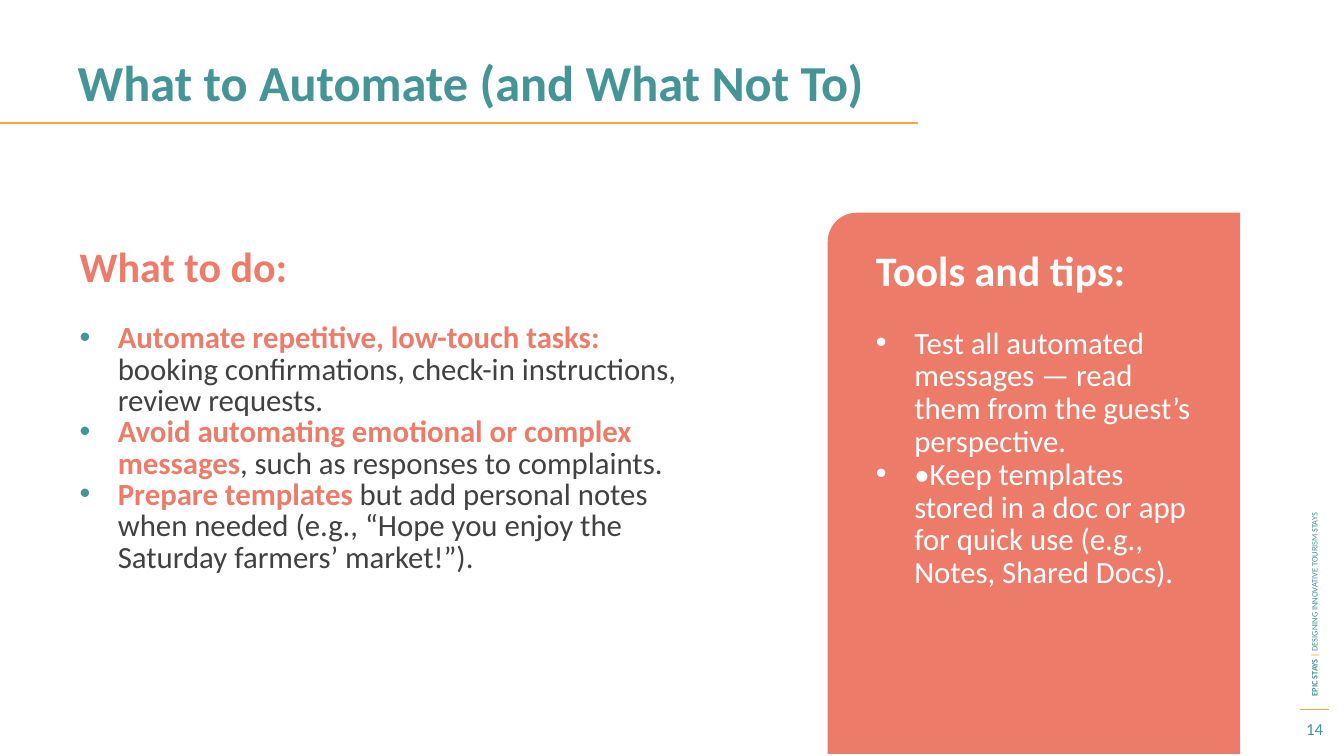
"""Build the slide on what to automate, with a card of tools and tips."""
from dataclasses import dataclass
from typing import Any, Optional

from lxml.etree import SubElement
from pptx import Presentation
from pptx.dml.color import RGBColor
from pptx.enum.shapes import MSO_CONNECTOR, MSO_SHAPE
from pptx.enum.text import MSO_ANCHOR, MSO_AUTO_SIZE, PP_ALIGN
from pptx.oxml.ns import qn
from pptx.util import Emu, Inches, Pt

COLORS = {
    "teal": "459597",
    "coral": "EC7C69",
    "amber": "FBA63B",
    "ink": "414141",
    "white": "FFFFFF",
}
SLIDE_W, SLIDE_H = Inches(13.33), Inches(7.5)
INDENT = Inches(0.38)


@dataclass(frozen=True)
class Box:
    """Place as percentages of the slide's width and height."""
    left: float
    top: float
    width: float
    height: float

    def frame(self, turned: bool = False) -> tuple[Emu, ...]:
        x, w = (Emu(int(SLIDE_W * v / 100)) for v in (self.left, self.width))
        y, h = (Emu(int(SLIDE_H * v / 100)) for v in (self.top, self.height))
        if turned:
            return Emu(x + (w - h) // 2), Emu(y + (h - w) // 2), h, w
        return x, y, w, h


@dataclass(frozen=True)
class Run:
    text: str
    color: str
    bold: bool = False


@dataclass(frozen=True)
class Para:
    runs: tuple[Run, ...]
    size: float
    spacing: Optional[float] = None
    bullet: Optional[str] = None
    before: float = 0
    align: PP_ALIGN = PP_ALIGN.LEFT


@dataclass(frozen=True)
class TextBlock:
    box: Box
    paras: tuple[Para, ...]
    anchor: MSO_ANCHOR = MSO_ANCHOR.TOP
    turned: bool = False


@dataclass(frozen=True)
class Rule:
    box: Box
    weight: float


def do_item(lead: str, rest: str) -> Para:
    runs = (Run(lead, "coral", True), Run(rest, "ink"))
    return Para(runs, 22, 22.4, "teal")


def tip_item(text: str, before: float = 0) -> Para:
    return Para((Run(text, "white"),), 22, 23.4, "white", before)


TITLE = TextBlock(
    Box(5.03, 7.2, 90, 11.73),
    (Para((Run("What to Automate (and What Not To)", "teal", True),), 36, 37.2),),
)
CARD = Box(61.59, 28.13, 30.68, 71.6)
RULES = (
    Rule(Box(0, 16.27, 68.34, 0), 1.5),
    Rule(Box(96.7, 93.87, 2.17, 0), 0.75),
)
BLOCKS = (
    TextBlock(
        Box(97.04, 16.47, 1.5, 76.93),
        (Para((
            Run("EPIC STAYS ", "teal", True),
            Run("| ", "amber", True),
            Run("DESIGNING INNOVATIVE TOURISM STAYS", "teal"),
        ), 6),),
        MSO_ANCHOR.MIDDLE, turned=True,
    ),
    TextBlock(
        Box(95.87, 94.13, 3.9, 4.53),
        (Para((Run("14", "teal"),), 12, align=PP_ALIGN.CENTER),),
        MSO_ANCHOR.MIDDLE,
    ),
    TextBlock(
        Box(5.18, 32.4, 46.06, 11.73),
        (Para((Run("What to do:", "coral", True),), 30, 29),),
    ),
    TextBlock(
        Box(5.18, 42.13, 46.06, 53.33),
        (
            do_item("Automate repetitive, low-touch tasks: ",
                    "booking confirmations, check-in instructions, review requests."),
            do_item("Avoid automating emotional or complex messages",
                    ", such as responses to complaints."),
            do_item("Prepare templates ",
                    "but add personal notes when needed (e.g., “Hope you enjoy "
                    "the Saturday farmers’ market!”)."),
        ),
    ),
    TextBlock(
        Box(64.44, 34, 25.88, 47.87),
        (
            Para((Run("Tools and tips:", "white", True),), 30, 23.4),
            tip_item("Test all automated messages — read them from the guest’s "
                     "perspective.", before=23.4),
            tip_item("•Keep templates stored in a doc or app for quick use "
                     "(e.g., Notes, Shared Docs)."),
        ),
    ),
)


def rgb(name: str) -> RGBColor:
    return RGBColor.from_string(COLORS[name])


def apply(target: Any, values: dict[str, Any]) -> None:
    for key, value in values.items():
        setattr(target, key, value)


def add_bullet(p: Any, color: str) -> None:
    pPr = p._p.get_or_add_pPr()
    pPr.set("marL", str(INDENT))
    pPr.set("indent", str(-INDENT))
    buClr = SubElement(pPr, qn("a:buClr"))
    SubElement(buClr, qn("a:srgbClr"), val=COLORS[color])
    SubElement(pPr, qn("a:buFont"), typeface="Arial")
    SubElement(pPr, qn("a:buChar"), char="•")


def fill_text(sp: Any, block: TextBlock) -> None:
    apply(sp, dict(zip(("left", "top", "width", "height"),
                       block.box.frame(block.turned))))
    sp.rotation = 270 if block.turned else 0
    tf = sp.text_frame
    apply(tf, {"word_wrap": True, "auto_size": MSO_AUTO_SIZE.NONE,
               "vertical_anchor": block.anchor})
    for i, para in enumerate(block.paras):
        p = tf.add_paragraph() if i else tf.paragraphs[0]
        if para.bullet:
            add_bullet(p, para.bullet)
        apply(p, {"alignment": para.align, "space_before": Pt(para.before),
                  "line_spacing": Pt(para.spacing) if para.spacing else None})
        for run in para.runs:
            r = p.add_run()
            r.text = run.text
            apply(r.font, {"name": "Calibri", "size": Pt(para.size),
                           "bold": run.bold})
            r.font.color.rgb = rgb(run.color)


def add_card(shapes: Any, box: Box) -> None:
    sp = shapes.add_shape(MSO_SHAPE.ROUND_1_RECTANGLE, *box.frame(turned=True))
    sp.rotation = 270
    sp.adjustments[0] = 0.07
    sp.shadow.inherit = False
    sp.fill.solid()
    sp.fill.fore_color.rgb = rgb("coral")
    sp.line.fill.background()


def add_rule(shapes: Any, rule: Rule) -> None:
    x, y, w, h = rule.box.frame()
    cx = shapes.add_connector(MSO_CONNECTOR.STRAIGHT, x, y, x + w, y + h)
    cx.line.color.rgb = rgb("amber")
    cx.line.width = Pt(rule.weight)
    SubElement(cx._element.spPr, qn("a:effectLst"))


def main() -> None:
    prs = Presentation()
    apply(prs, {"slide_width": SLIDE_W, "slide_height": SLIDE_H})
    s = prs.slides.add_slide(prs.slide_layouts[5])
    add_card(s.shapes, CARD)
    fill_text(s.shapes.title, TITLE)
    for rule in RULES:
        add_rule(s.shapes, rule)
    for block in BLOCKS:
        fill_text(s.shapes.add_textbox(*block.box.frame()), block)
    prs.save("out.pptx")


if __name__ == "__main__":
    main()
